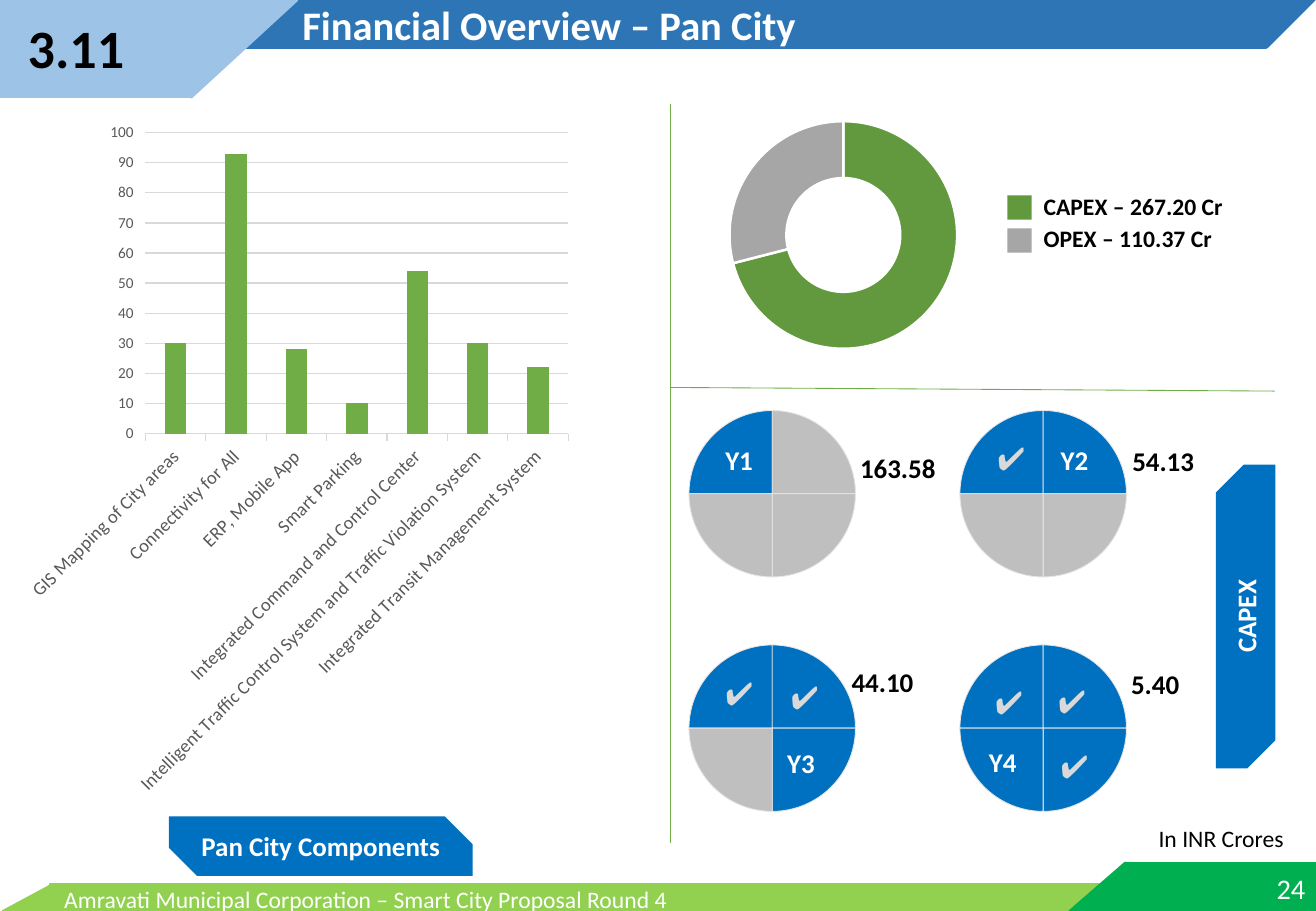
from dataclasses import dataclass
from lxml import etree
from pptx import Presentation
from pptx import util as u
from pptx.chart import data as cd
from pptx.dml import color as dc
from pptx.enum import chart as ch, shapes, text
from pptx.oxml import ns

MSO, AL, ANC = shapes.MSO_SHAPE, text.PP_ALIGN, text.MSO_ANCHOR


@dataclass(frozen=True)
class Theme:
    font: str = "Calibri"
    symbol: str = "Arial"
    white: str = "FFFFFF"
    black: str = "000000"
    header: str = "2E75B6"
    tab: str = "9DC3E6"
    footer: str = "92D050"
    page: str = "00B050"
    blue: str = "0070C0"
    idle: str = "BFBFBF"
    edge: str = "E7E6E6"
    tick: str = "D9D9D9"
    capex: str = "62993E"
    opex: str = "A6A6A6"
    bar: str = "70AD47"
    axis: str = "595959"
    number: float = 32
    title: float = 24
    mark: float = 18.9
    page_no: float = 16.8
    label: float = 16
    body: float = 14
    category: float = 11
    chart: float = 10
    value: float = 9


def rgb(c):
    return dc.RGBColor.from_string(c)


def apply(obj, values):
    for name, value in values.items():
        setattr(obj, name, value)


class Deck:
    def __init__(self, theme, width, height):
        self.t = theme
        self.prs = Presentation()
        apply(self.prs, {"slide_width": u.Inches(width), "slide_height": u.Inches(height)})
        self.s = self.prs.slides.add_slide(self.prs.slide_layouts[6])

    def font(self, f, size, color, bold=False, name=None):
        apply(f, {"name": name or self.t.font, "size": u.Pt(size), "bold": bold})
        f.color.rgb = rgb(color)

    def line(self, ln, color, width):
        ln.color.rgb = rgb(color)
        ln.width = u.Pt(width)

    def fill_text(self, sp, lines, size, color, bold=False, name=None, align=AL.LEFT,
                  anchor=ANC.TOP, wrap=True, spacing=1.0, gap=0):
        tf = sp.text_frame
        apply(tf, {"word_wrap": wrap, "vertical_anchor": anchor})
        for i, words in enumerate(lines):
            p = tf.add_paragraph() if i else tf.paragraphs[0]
            apply(p, {"alignment": align, "line_spacing": spacing,
                      "space_before": u.Pt(gap if i else 0)})
            r = p.add_run()
            r.text = words
            self.font(r.font, size, color, bold, name)

    def text(self, box, words, size, color, **fmt):
        sp = self.s.shapes.add_textbox(*map(u.Inches, box))
        self.fill_text(sp, words.split("\n"), size, color, **fmt)

    def shape(self, kind, box, fill, rot=0, edge=None, width=1, adj=()):
        sp = self.s.shapes.add_shape(kind, *map(u.Inches, box))
        sp.shadow.inherit = False
        sp.rotation = rot
        sp.fill.solid()
        sp.fill.fore_color.rgb = rgb(fill)
        if edge:
            self.line(sp.line, edge, width)
        else:
            sp.line.fill.background()
        for i, value in enumerate(adj):
            sp.adjustments[i] = value
        return sp

    def banner(self, box, words, rot=0):
        sp = self.shape(MSO.SNIP_2_DIAG_RECTANGLE, box, self.t.blue, rot, adj=(0, 0.47))
        self.fill_text(sp, [words], self.t.label, self.t.white, bold=True,
                       align=AL.CENTER, anchor=ANC.MIDDLE)

    def year_wheel(self, left, top, done):
        r = 0.685
        for i, (col, row) in enumerate([(0, 0), (1, 0), (1, 1), (0, 1)]):
            active = i == 0 or i < done
            self.shape(MSO.PIE_WEDGE, (left + col * r, top + row * r, r, r),
                       self.t.blue if active else self.t.idle,
                       90 * i, self.t.edge, 0.5)

    def rule(self, x1, y1, x2, y2):
        cn = self.s.shapes.add_connector(shapes.MSO_CONNECTOR.STRAIGHT,
                                         *map(u.Inches, (x1, y1, x2, y2)))
        self.line(cn.line, self.t.bar, 0.5)
        etree.SubElement(cn._element.spPr, ns.qn("a:effectLst"))

    def chart(self, kind, box, cats, vals):
        data = cd.CategoryChartData()
        data.categories = cats
        data.add_series("Series 1", vals)
        c = self.s.shapes.add_chart(kind, *map(u.Inches, box), data).chart
        apply(c, {"has_legend": False, "has_title": False})
        self.font(c.font, self.t.chart, self.t.black)
        return c

    def columns(self, box, cats, vals, layout):
        c = self.chart(ch.XL_CHART_TYPE.COLUMN_CLUSTERED, box, cats, vals)
        plot, cat, val = c.plots[0], c.category_axis, c.value_axis
        apply(plot, {"gap_width": 182, "vary_by_categories": False})
        fill = plot.series[0].format.fill
        fill.solid()
        fill.fore_color.rgb = rgb(self.t.bar)
        apply(val, {"minimum_scale": 0, "maximum_scale": 100, "major_unit": 10,
                    "has_major_gridlines": True})
        val.format.line.fill.background()
        for ln in (val.major_gridlines.format.line, cat.format.line):
            self.line(ln, self.t.tick, 0.75)
        self.font(cat.tick_labels.font, self.t.category, self.t.axis)
        self.font(val.tick_labels.font, self.t.value, self.t.axis)
        cat._element.txPr.bodyPr.set("rot", "-2700000")
        area = c._chartSpace.chart.plotArea
        for old in area.findall(ns.qn("c:layout")):
            area.remove(old)
        node = etree.Element(ns.qn("c:layout"))
        area.insert(0, node)
        manual = etree.SubElement(node, ns.qn("c:manualLayout"))
        settings = {"layoutTarget": "inner", "xMode": "edge", "yMode": "edge", **layout}
        for tag, value in settings.items():
            etree.SubElement(manual, ns.qn("c:" + tag)).set("val", str(value))

    def doughnut(self, box, cats, vals, colors):
        c = self.chart(ch.XL_CHART_TYPE.DOUGHNUT, box, cats, vals)
        plot = c.plots[0]
        plot.vary_by_categories = True
        plot._element.find(ns.qn("c:holeSize")).set("val", "50")
        for i, color in enumerate(colors):
            fmt = plot.series[0].points[i].format
            fmt.fill.solid()
            fmt.fill.fore_color.rgb = rgb(color)
            self.line(fmt.line, self.t.white, 1.5)


def main():
    t = Theme()
    d = Deck(t, 10.83, 7.5)

    for box, tri, color, rot, tri_rot in [
        ((0.5, 0, 9.92, 0.4), (10.43, 0, 0.39, 0.39), t.header, 0, 90),
        ((0, 0, 1.57, 0.8), (1.61, -0.03, 0.8, 0.87), t.tab, 0, 90),
        ((0.41, 7.28, 9.92, 0.22), (0.11, 7.2, 0.21, 0.39), t.footer, 180, 270),
        ((9.27, 7.1, 1.57, 0.4), (8.83, 7.07, 0.4, 0.46), t.page, 180, 270),
    ]:
        d.shape(MSO.RECTANGLE, box, color, rot, color)
        d.shape(MSO.ISOSCELES_TRIANGLE, tri, color, tri_rot, color, adj=(0,))
    d.text((9.27, 7.11, 1.57, 0.4), "24", t.page_no, t.white, align=AL.RIGHT, anchor=ANC.MIDDLE)
    d.text((0.43, 7.25, 7.55, 0.31),
           "Amravati Municipal Corporation – Smart City Proposal Round 4",
           t.body, t.white, anchor=ANC.MIDDLE)
    d.text((2.39, 0, 7.39, 0.36), "Financial Overview – Pan City", t.title, t.white,
           bold=True, spacing=0.9)
    d.text((0.13, 0.13, 1.44, 0.41), "3.11", t.number, t.black, bold=True, spacing=0.9)
    d.text((8.77, 6.73, 2.56, 0.34), "In INR Crores", t.body, t.black, align=AL.CENTER)

    d.text((8.49, 1.53, 2.56, 0.61), "CAPEX – 267.20 Cr\nOPEX – 110.37 Cr",
           t.body, t.black, bold=True, gap=2.4)
    for top, color in ((1.61, t.capex), (1.88, t.opex)):
        d.shape(MSO.RECTANGLE, (8.29, top, 0.2, 0.2), color)

    for i, (year, amount) in enumerate([
        ((5.87, 3.6), ("163.58", 6.98, 3.67)),
        ((8.63, 3.6), ("54.13", 9.22, 3.61)),
        ((6.38, 6.1), ("44.10", 6.91, 5.43)),
        ((8.04, 6.09), ("5.40", 9.21, 5.45)),
    ]):
        d.year_wheel(5.67 + i % 2 * 2.23, 3.38 + i // 2 * 1.93, i + 1)
        d.text((*year, 0.59, 0.37), f"Y{i + 1}", t.label, t.white, bold=True)
        words, left, top = amount
        d.text((left, top, 1.07, 0.37), words, t.label, t.black, bold=True)

    d.banner((9, 4.83, 2.5, 0.49), "CAPEX", 270)
    d.banner((1.39, 6.72, 2.5, 0.49), "Pan City Components")
    d.rule(5.52, 0.86, 5.52, 6.94)
    d.rule(10.49, 3.22, 5.52, 3.19)
    for spot in [(8.11, 3.56), (5.87, 5.5), (6.41, 5.53),
                 (8.09, 5.57), (8.61, 5.56), (8.63, 6.1)]:
        d.text((*spot, 0.41, 0.42), "✔", t.mark, t.tick, name=t.symbol, wrap=False)

    d.columns((0.13, 0.92, 4.64, 5.76), [
        "GIS Mapping of City areas", "Connectivity for All", "ERP, Mobile App",
        "Smart Parking", "Integrated Command and Control Center",
        "Intelligent Traffic Control System and Traffic Violation System",
        "Integrated Transit Management System",
    ], [30, 93, 28, 10, 54, 30, 22], {"x": 0.23, "y": 0.03, "w": 0.75, "h": 0.43})
    d.doughnut((5.27, 0.86, 3.34, 2.15), ["1", "2"], [71, 29], (t.capex, t.opex))

    d.prs.save("out.pptx")


if __name__ == "__main__":
    main()
